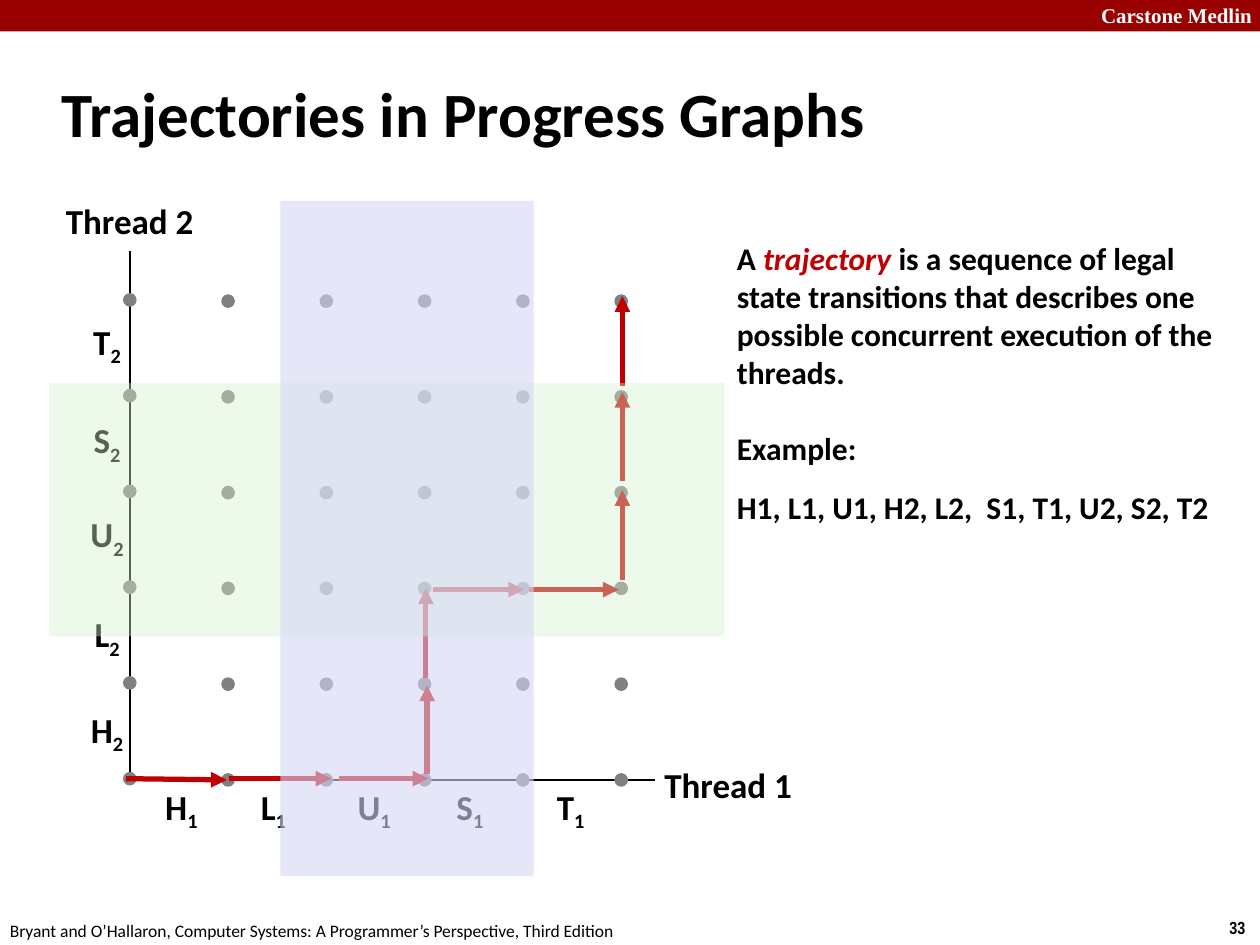
"""Builds the slide on trajectories in progress graphs."""
from lxml import etree
from pptx import Presentation
from pptx.dml.color import RGBColor
from pptx.enum import shapes, text
from pptx.oxml import ns
from pptx.util import Inches, Pt

BLACK = RGBColor(0x00, 0x00, 0x00)
WHITE = RGBColor(0xFF, 0xFF, 0xFF)
BANNER_RED = RGBColor(0x99, 0x00, 0x00)
PATH_RED = RGBColor(0xC0, 0x00, 0x00)
DOT_GREY = RGBColor(0x80, 0x80, 0x80)
BAND_GREEN = RGBColor(0xD5, 0xF1, 0xCF)
BAND_BLUE = RGBColor(0xD6, 0xD6, 0xF5)


def write(paragraph, wording, color=BLACK, **font_values):
    run = paragraph.add_run()
    run.text = wording
    run.font.color.rgb = color
    for attribute, value in {"name": "Calibri", "bold": True, **font_values}.items():
        setattr(run.font, attribute, value)
    return run


def draw_line(start, end, color, width):
    points = [Inches(value) for value in (*start, *end)]
    line = slide.shapes.add_connector(shapes.MSO_CONNECTOR.STRAIGHT, *points)
    line.line.color.rgb = color
    line.line.width = Pt(width)
    etree.SubElement(line._element.spPr, ns.qn("a:effectLst"))
    return line


deck = Presentation()
deck.slide_width, deck.slide_height = Inches(10), Inches(7.5)
slide = deck.slides.add_slide(deck.slide_layouts[5])

banner = slide.shapes.add_shape(shapes.MSO_SHAPE.RECTANGLE, 0, 0, Inches(10), Inches(0.25))
banner.shadow.inherit = False
banner.fill.solid()
banner.fill.fore_color.rgb = BANNER_RED
banner.line.fill.background()

heading = slide.shapes.title
heading_place = {"left": 0.39, "top": 0.48, "width": 8.3, "height": 0.83}
for attribute, value in heading_place.items():
    setattr(heading, attribute, Inches(value))
heading.text_frame.vertical_anchor = text.MSO_ANCHOR.MIDDLE
heading.text_frame.paragraphs[0].alignment = text.PP_ALIGN.LEFT
write(heading.text_frame.paragraphs[0], "Trajectories in Progress Graphs", size=Pt(36))

margin_notes = [
    ("Carstone Medlin", (8.64, -0.03, 1.43, 0.3), WHITE,
     {"name": "Times New Roman", "size": Pt(12)}),
    ("33", (9.66, 7.23, 0.34, 0.27), BLACK, {"name": "Arial Narrow", "size": Pt(10)}),
    ("Bryant and O’Hallaron, Computer Systems: A Programmer’s Perspective, Third Edition",
     (-0.02, 7.25, 5.08, 0.27), BLACK, {"size": Pt(10), "bold": False}),
]
for wording, place, color, font_values in margin_notes:
    note = slide.shapes.add_textbox(*[Inches(value) for value in place])
    note.text_frame.word_wrap = False
    note.text_frame.auto_size = text.MSO_AUTO_SIZE.SHAPE_TO_FIT_TEXT
    write(note.text_frame.paragraphs[0], wording, color, **font_values)

definition = slide.shapes.add_textbox(Inches(5.75), Inches(1.84), Inches(4.17), Inches(2.39))
definition.text_frame.word_wrap = True
definition.text_frame.vertical_anchor = text.MSO_ANCHOR.MIDDLE
sentence = definition.text_frame.paragraphs[0]
write(sentence, "A ", size=Pt(18))
write(sentence, "trajectory", PATH_RED, size=Pt(18), italic=True)
write(sentence, " is a sequence of legal state transitions that describes one "
      "possible concurrent execution of the threads.", size=Pt(18))
for wording, gap in [("Example:", 22), ("H1, L1, U1, H2, L2,  S1, T1, U2, S2, T2", 12)]:
    example = definition.text_frame.add_paragraph()
    example.space_before = Pt(gap)
    write(example, wording, size=Pt(18))

origin = (1.03, 6.19)
for axis_end in [(5.2, 6.19), (1.03, 1.99)]:
    draw_line(origin, axis_end, BLACK, 1)

axis_labels = [("Thread 1", "", 5.78, 6.23), ("Thread 2", "", 1.03, 1.75)]
axis_labels += [(step, "1", x, 6.42)
                for step, x in zip("HLUST", (1.44, 2.17, 2.97, 3.73, 4.53))]
axis_labels += [(step, "2", 0.85, y)
                for step, y in zip("HLUST", (5.81, 5.05, 4.26, 3.51, 2.73))]
for wording, thread, center_x, center_y in axis_labels:
    width = 0.5 if thread else 1.24
    label = slide.shapes.add_textbox(Inches(center_x - width / 2), Inches(center_y - 0.22),
                                     Inches(width), Inches(0.44))
    label.text_frame.word_wrap = False
    label.text_frame.auto_size = text.MSO_AUTO_SIZE.SHAPE_TO_FIT_TEXT
    label.text_frame.vertical_anchor = text.MSO_ANCHOR.MIDDLE
    label_line = label.text_frame.paragraphs[0]
    label_line.alignment = text.PP_ALIGN.CENTER
    write(label_line, wording, size=Pt(20))
    if thread:
        subscript = write(label_line, thread, size=Pt(20))
        subscript.font._element.set("baseline", "-25000")

for column in range(6):
    states = slide.shapes.add_group_shape()
    bottom = 6.15 if column else 6.14
    for row in range(6):
        state = states.shapes.add_shape(
            shapes.MSO_SHAPE.OVAL, Inches(0.99 + 0.78 * column), Inches(bottom - 0.76 * row),
            Inches(0.08), Inches(0.08))
        state.shadow.inherit = False
        state.fill.solid()
        state.fill.fore_color.rgb = DOT_GREY
        state.line.color.rgb = DOT_GREY
        state.line.width = Pt(2)

trajectory = [
    ((1, 6.18), (1.8, 6.19)),
    ((1.82, 6.18), (2.63, 6.18)),
    ((2.69, 6.18), (3.4, 6.18)),
    ((3.39, 6.14), (3.39, 5.44)),
    ((3.38, 5.38), (3.38, 4.67)),
    ((3.44, 4.68), (4.16, 4.68)),
    ((4.2, 4.68), (4.91, 4.68)),
    ((4.94, 4.6), (4.94, 3.89)),
    ((4.94, 3.82), (4.94, 3.11)),
    ((4.94, 3.06), (4.94, 2.35)),
]
for start, end in trajectory:
    transition = draw_line(start, end, PATH_RED, 3)
    etree.SubElement(transition.line._get_or_add_ln(), ns.qn("a:tailEnd"), type="triangle")

for left, top, turn, color, opacity in [(0.39, 3.04, 0, BAND_GREEN, 41),
                                        (0.55, 3.27, 90, BAND_BLUE, 60)]:
    critical_section = slide.shapes.add_shape(
        shapes.MSO_SHAPE.RECTANGLE, Inches(left), Inches(top), Inches(5.36), Inches(2.01))
    critical_section.rotation = turn
    critical_section.shadow.inherit = False
    critical_section.fill.solid()
    critical_section.fill.fore_color.rgb = color
    critical_section.line.fill.background()
    tint = critical_section._element.spPr.find(ns.qn("a:solidFill"))[0]
    etree.SubElement(tint, ns.qn("a:alpha"), val=str(opacity * 1000))

deck.save("out.pptx")
